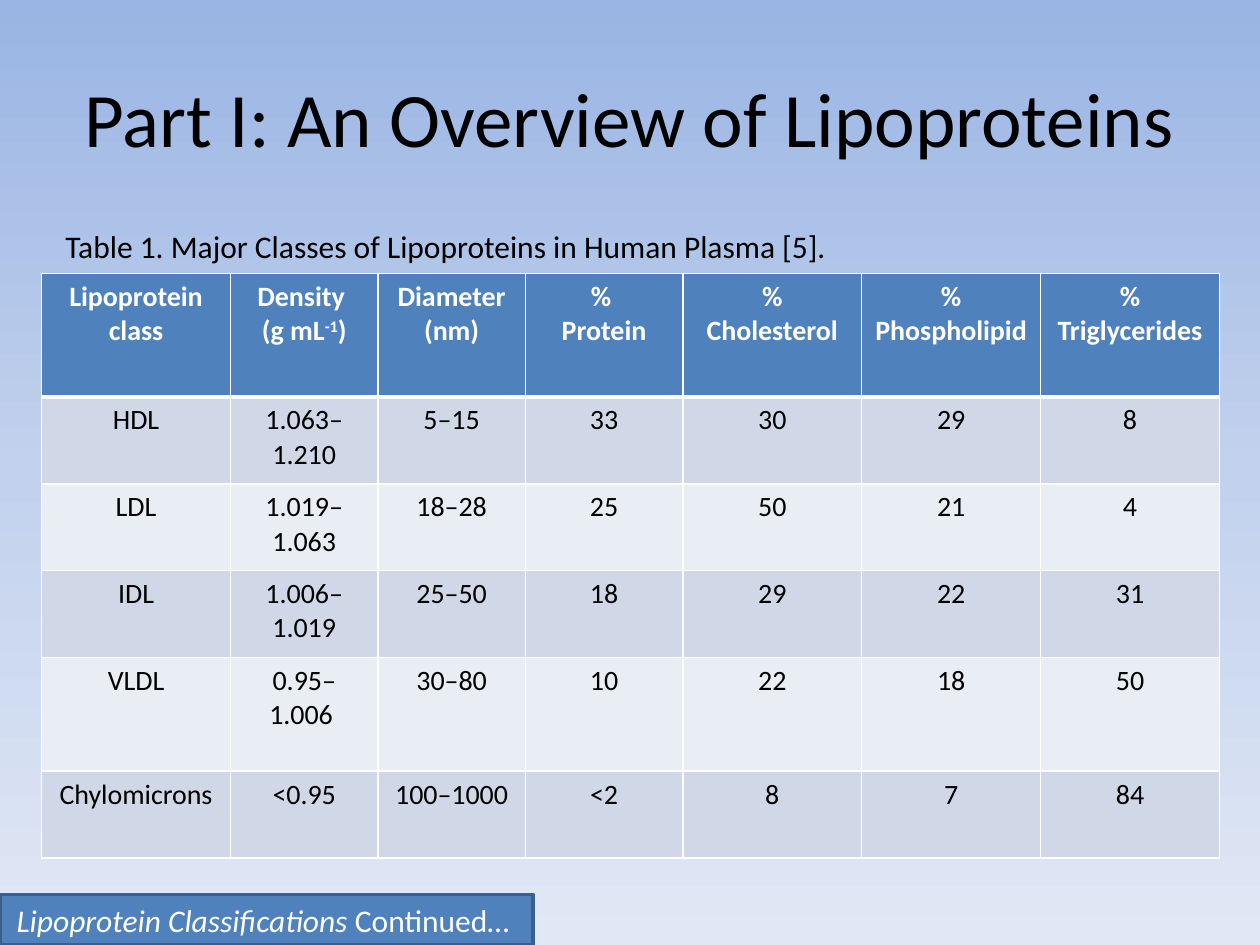
import copy

import pptx
import pptx.dml.color
import pptx.enum.shapes
import pptx.enum.text
import pptx.oxml
import pptx.oxml.ns
import pptx.util

Inches, Pt = pptx.util.Inches, pptx.util.Pt
RGB = pptx.dml.color.RGBColor.from_string
qn = pptx.oxml.ns.qn
ALIGN = pptx.enum.text.PP_ALIGN
AUTO = pptx.enum.text.MSO_AUTO_SIZE

THEME = {
    "font": "Calibri",
    "dark": "000000", "light": "FFFFFF",
    "accent": "4F81BD", "outline": "3A5F8C",
    "bands": ["D0D8E8", "E9EDF4"],
    "background": [(0, "9AB5E4"), (0.5, "C2D1ED"), (1, "E1E8F5")],
    "title": 44, "body": 18, "cell": 16,
    "rule": 1, "header_rule": 3,
}

TITLE = "Part I: An Overview of Lipoproteins"
CAPTION = "Table 1. Major Classes of Lipoproteins in Human Plasma [5]."
BADGE = [("Lipoprotein Classifications ", {"italic": True}), ("Continued… ", {})]

# Each header is a list of paragraphs, each paragraph a list of (text, format) runs.
HEADERS = [
    [[("Lipoprotein class", {})]],
    [[("Density ", {})], [("(g mL", {}), ("-1", {"superscript": 30}), (")", {})]],
    [[("Diameter (nm)", {})]],
    [[("% ", {})], [("Protein", {})]],
    [[("% Cholesterol", {})]],
    [[("% Phospholipid", {})]],
    [[("% Triglycerides", {})]],
]
ROWS = [
    ("HDL", "1.063–1.210", "5–15", "33", "30", "29", "8"),
    ("LDL", "1.019–1.063", "18–28", "25", "50", "21", "4"),
    ("IDL", "1.006–1.019", "25–50", "18", "29", "22", "31"),
    ("VLDL", "0.95–1.006 ", "30–80", "10", "22", "18", "50"),
    ("Chylomicrons", "<0.95", "100–1000", "<2", "8", "7", "84"),
]
COL_WIDTHS = [1.5, 1.17, 1.17, 1.25, 1.42, 1.42, 1.42]
ROW_HEIGHTS = [0.98, 0.69, 0.69, 0.69, 0.9, 0.69]


def box(left, top, width, height):
    return [Inches(v) for v in (left, top, width, height)]


def write(tf, paragraphs, size, color, align=ALIGN.CENTER, **style):
    for i, runs in enumerate(paragraphs):
        p = tf.paragraphs[0] if i == 0 else tf.add_paragraph()
        p.alignment = align
        for text, extra in runs:
            r = p.add_run()
            r.text = text
            formats = {"name": THEME["font"], "size": Pt(size), **style, **extra}
            superscript = formats.pop("superscript", None)
            for name, value in formats.items():
                setattr(r.font, name, value)
            r.font.color.rgb = RGB(color)
            if superscript:
                r.font.element.set("baseline", str(superscript * 1000)) if hasattr(
                    r.font, "element") else r._r.get_or_add_rPr().set(
                    "baseline", str(superscript * 1000))


def paint_background(s):
    fill = s.background.fill
    fill.gradient()
    fill.gradient_angle = 270
    stops = s.element.find(".//" + qn("a:gsLst"))
    stops.append(copy.deepcopy(stops[0]))
    for stop, (position, color) in zip(fill.gradient_stops, THEME["background"]):
        stop.position = position
        stop.color.rgb = RGB(color)


def set_borders(cell, top, bottom):
    widths = {"lnL": THEME["rule"], "lnR": THEME["rule"], "lnT": top, "lnB": bottom}
    tcPr = cell._tc.get_or_add_tcPr()
    for side, width in widths.items():
        tcPr.append(pptx.oxml.parse_xml(
            f'<a:{side} {pptx.oxml.ns.nsdecls("a")} w="{Pt(width)}"><a:solidFill>'
            f'<a:srgbClr val="{THEME["light"]}"/></a:solidFill></a:{side}>'))


def add_lipoprotein_table(s):
    body = [[[[(text, {})]] for text in row] for row in ROWS]
    grid = [HEADERS] + body
    table = s.shapes.add_table(
        len(grid), len(HEADERS),
        *box(0.33, 2.17, sum(COL_WIDTHS), sum(ROW_HEIGHTS))).table
    for column, width in zip(table.columns, COL_WIDTHS):
        column.width = Inches(width)
    for i, (row, height) in enumerate(zip(table.rows, ROW_HEIGHTS)):
        row.height = Inches(height)
        header = i == 0
        fill = THEME["accent"] if header else THEME["bands"][(i - 1) % 2]
        color = THEME["light"] if header else THEME["dark"]
        top = THEME["header_rule"] if i == 1 else THEME["rule"]
        bottom = THEME["header_rule"] if header else THEME["rule"]
        for cell, paragraphs in zip(row.cells, grid[i]):
            set_borders(cell, top, bottom)
            cell.fill.solid()
            cell.fill.fore_color.rgb = RGB(fill)
            write(cell.text_frame, paragraphs, THEME["cell"], color, bold=header)


def add_badge(s):
    sp = s.shapes.add_shape(
        pptx.enum.shapes.MSO_SHAPE.RECTANGLE, *box(0, 7.1, 4.23, 0.4))
    sp.shadow.inherit = False
    sp.fill.solid()
    sp.fill.fore_color.rgb = RGB(THEME["accent"])
    sp.line.color.rgb = RGB(THEME["outline"])
    sp.line.width = Pt(2)
    sp.text_frame.word_wrap = False
    sp.text_frame.auto_size = AUTO.SHAPE_TO_FIT_TEXT
    write(sp.text_frame, [BADGE], THEME["body"], THEME["light"])


def main():
    prs = pptx.Presentation()
    prs.slide_width, prs.slide_height = Inches(10), Inches(7.5)
    s = prs.slides.add_slide(prs.slide_layouts[5])
    paint_background(s)

    title = s.shapes.title
    title.left, title.top, title.width, title.height = box(0.5, 0.3, 9, 1.25)
    title.text_frame.vertical_anchor = pptx.enum.text.MSO_ANCHOR.MIDDLE
    write(title.text_frame, [[(TITLE, {})]], THEME["title"], THEME["dark"])

    add_badge(s)
    add_lipoprotein_table(s)

    caption = s.shapes.add_textbox(*box(0.42, 1.75, 6.31, 0.4)).text_frame
    caption.word_wrap = False
    caption.auto_size = AUTO.SHAPE_TO_FIT_TEXT
    write(caption, [[(CAPTION, {})]], THEME["body"], THEME["dark"], ALIGN.LEFT)

    prs.save("out.pptx")


if __name__ == "__main__":
    main()
